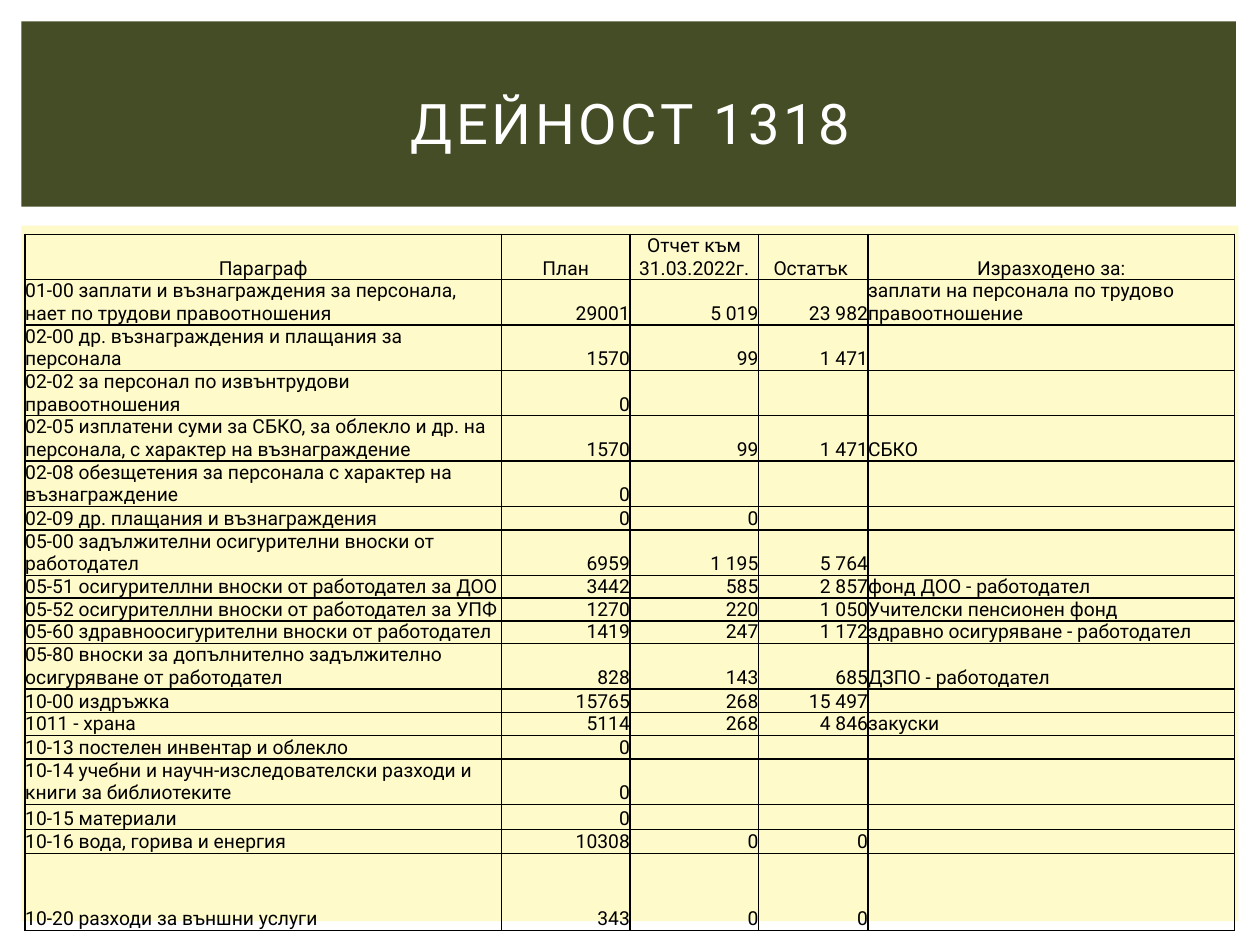
import dataclasses

import pptx
import pptx.dml.color
import pptx.enum.shapes
import pptx.enum.text
import pptx.oxml
import pptx.oxml.ns
import pptx.util

Inches = pptx.util.Inches
Align = pptx.enum.text.PP_ALIGN


@dataclasses.dataclass(frozen=True)
class Theme:
    font: str = "Roboto"
    band: str = "444D26"
    panel: str = "FEFAC9"
    title_text: str = "FFFFFF"
    text: str = "000000"
    border: str = "000000"
    title_size: int = 32
    table_size: int = 11
    border_width: int = 1


THEME = Theme()

COLUMN_WIDTHS = (3.78, 1.02, 1.02, 0.87, 2.91)
COLUMN_ALIGNS = (Align.LEFT, Align.RIGHT, Align.RIGHT, Align.RIGHT, Align.LEFT)
ONE_LINE, TWO_LINES = 0.18, 0.36

HEADERS = ("Параграф", "План", "Отчет към 31.03.2022г.", "Остатък ", "Изразходено за:")

# Row height, paragraph, plan, report, remainder, purpose
BUDGET_ROWS = (
    (TWO_LINES, "01-00 заплати и възнаграждения за персонала, нает по трудови правоотношения",
     "29001", "5 019", "23 982", "заплати на персонала по трудово правоотношение"),
    (TWO_LINES, "02-00 др. възнаграждения и плащания за персонала", "1570", "99", "1 471", ""),
    (TWO_LINES, "02-02 за персонал по извънтрудови правоотношения", "0", "", "", ""),
    (TWO_LINES, "02-05 изплатени суми за СБКО, за облекло и др. на персонала, с характер на възнаграждение",
     "1570", "99", "1 471", "СБКО"),
    (TWO_LINES, "02-08 обезщетения за персонала с характер на възнаграждение", "0", "", "", ""),
    (ONE_LINE, "02-09 др. плащания и възнаграждения", "0", "0", "", ""),
    (TWO_LINES, "05-00 задължителни осигурителни вноски от работодател", "6959", "1 195", "5 764", ""),
    (ONE_LINE, "05-51 осигурителлни вноски от работодател за ДОО",
     "3442", "585", "2 857", "фонд ДОО - работодател"),
    (ONE_LINE, "05-52 осигурителлни вноски от работодател за УПФ",
     "1270", "220", "1 050", "Учителски пенсионен фонд"),
    (ONE_LINE, "05-60 здравноосигурителни вноски от работодател",
     "1419", "247", "1 172", "здравно осигуряване - работодател"),
    (TWO_LINES, "05-80 вноски за допълнително задължително осигуряване от работодател",
     "828", "143", "685", "ДЗПО - работодател"),
    (ONE_LINE, "10-00 издръжка", "15765", "268", "15 497", ""),
    (ONE_LINE, "1011 - храна", "5114", "268", "4 846", "закуски"),
    (ONE_LINE, "10-13 постелен инвентар и облекло", "0", "", "", ""),
    (TWO_LINES, "10-14 учебни и научн-изследователски разходи и книги за библиотеките", "0", "", "", ""),
    (0.2, "10-15 материали", "0", "", "", ""),
    (ONE_LINE, "10-16 вода, горива и енергия", "10308", "0", "0", ""),
    (0.61, "10-20 разходи за външни услуги", "343", "0", "0", ""),
)


def color(value):
    return pptx.dml.color.RGBColor.from_string(value)


def add_run(paragraph, text, size, text_color):
    run = paragraph.add_run()
    run.text = text
    run.font.name = THEME.font
    run.font.size = pptx.util.Pt(size)
    run.font.color.rgb = color(text_color)
    return run


def add_block(slide, box, fill):
    """Plain background rectangle."""
    shape = slide.shapes.add_shape(
        pptx.enum.shapes.MSO_SHAPE.RECTANGLE, *(Inches(length) for length in box))
    shape.shadow.inherit = False
    shape.fill.solid()
    shape.fill.fore_color.rgb = color(fill)
    shape.line.fill.background()


def add_title_band(slide, box, text):
    """Dark band with the slide title inside it."""
    add_block(slide, box, THEME.band)
    left, top, width, height = box
    title = slide.shapes.title
    title.left, title.top = Inches(left + 0.25), Inches(top + 0.22)
    title.width, title.height = Inches(width - 0.47), Inches(height - 0.32)
    slide.shapes._spTree.append(title._element)  # bring in front of the band
    frame = title.text_frame
    frame.word_wrap = True
    frame.vertical_anchor = pptx.enum.text.MSO_ANCHOR.MIDDLE
    paragraph = frame.paragraphs[0]
    paragraph.alignment = Align.CENTER
    run = add_run(paragraph, text, THEME.title_size, THEME.title_text)
    run.font._element.set("spc", "200")


def add_borders(cell):
    properties = cell._tc.get_or_add_tcPr()
    width = pptx.util.Pt(THEME.border_width)
    for index, side in enumerate(("lnL", "lnR", "lnT", "lnB")):
        properties.insert(index, pptx.oxml.parse_xml(
            f'<a:{side} {pptx.oxml.ns.nsdecls("a")} w="{width}"><a:solidFill>'
            f'<a:srgbClr val="{THEME.border}"/></a:solidFill></a:{side}>'))


def fill_cell(cell, text, alignment):
    cell.fill.background()
    add_borders(cell)
    cell.margin_left = cell.margin_right = cell.margin_top = cell.margin_bottom = 0
    cell.vertical_anchor = pptx.enum.text.MSO_ANCHOR.BOTTOM
    paragraph = cell.text_frame.paragraphs[0]
    paragraph.alignment = alignment
    if text:
        add_run(paragraph, text, THEME.table_size, THEME.text)
    else:
        # Keep empty cells from stretching their row
        paragraph._p.append(pptx.oxml.parse_xml(
            f'<a:endParaRPr {pptx.oxml.ns.nsdecls("a")} sz="{THEME.table_size * 100}"/>'))


def add_budget_table(slide, box):
    """Budget table on its pale panel."""
    add_block(slide, box, THEME.panel)
    rows = ((TWO_LINES, *HEADERS), *BUDGET_ROWS)
    left, top = box[:2]
    table = slide.shapes.add_table(
        len(rows), len(COLUMN_WIDTHS), Inches(left + 0.03), Inches(top + 0.07),
        Inches(sum(COLUMN_WIDTHS)), Inches(sum(row[0] for row in rows))).table
    table.first_row = table.horz_banding = False
    for column, width in zip(table.columns, COLUMN_WIDTHS):
        column.width = Inches(width)
    for row_index, (height, *texts) in enumerate(rows):
        table.rows[row_index].height = Inches(height)
        for column_index, text in enumerate(texts):
            alignment = COLUMN_ALIGNS[column_index] if row_index else Align.CENTER
            fill_cell(table.cell(row_index, column_index), text, alignment)


def main():
    presentation = pptx.Presentation()
    presentation.slide_width = Inches(10)
    presentation.slide_height = Inches(7.5)
    slide = presentation.slides.add_slide(presentation.slide_layouts[5])
    add_title_band(slide, (0.17, 0.17, 9.64, 1.47), "ДЕЙНОСТ 1318")
    add_budget_table(slide, (0.17, 1.79, 9.66, 5.52))
    presentation.save("out.pptx")


if __name__ == "__main__":
    main()
